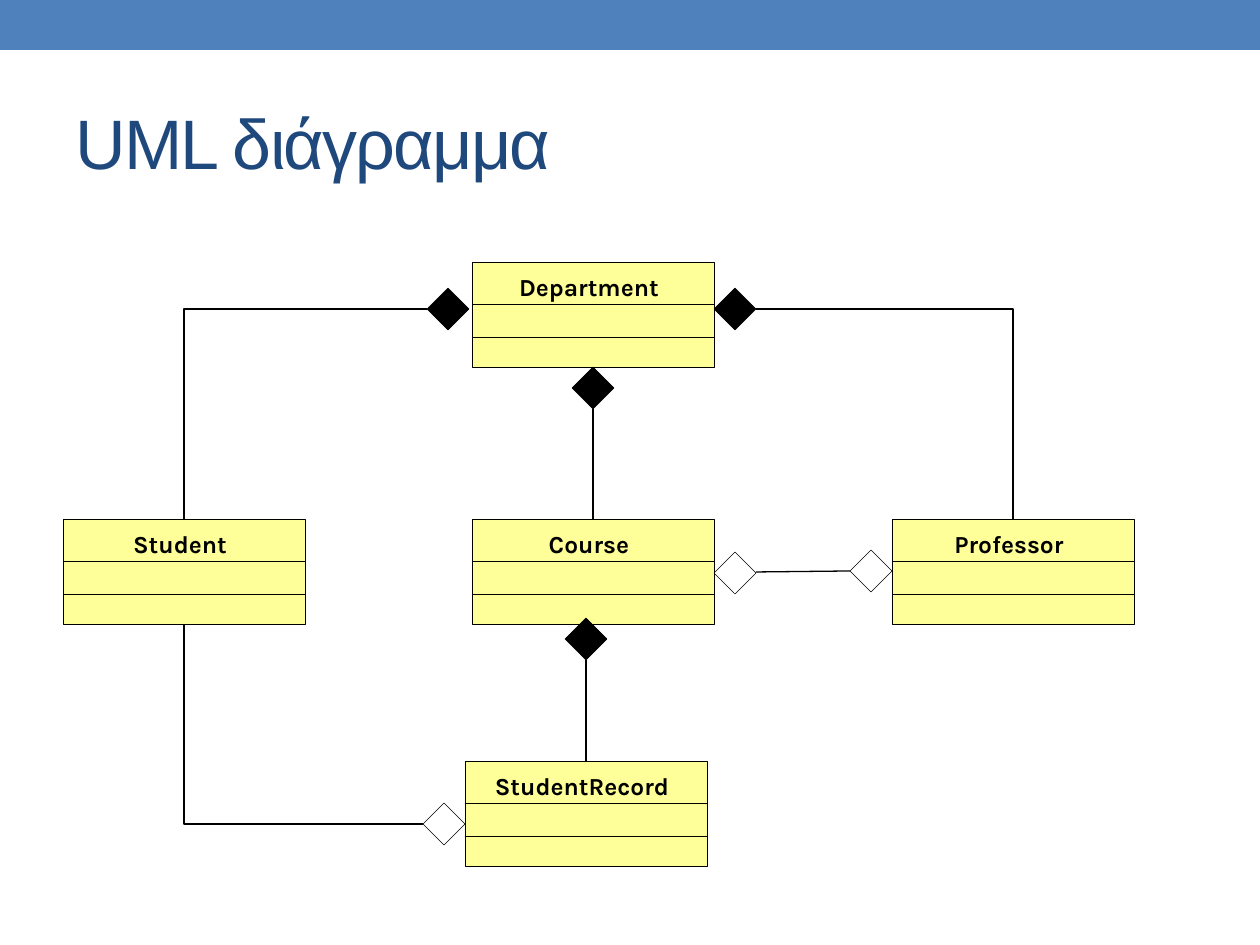
from dataclasses import dataclass

from lxml import etree
from pptx import Presentation
from pptx import util as u
from pptx.dml.color import RGBColor
from pptx.enum import shapes, text
from pptx.oxml.ns import qn

PX_PER_INCH = 126
COLORS = {"bar": "4F81BD", "title": "1F497D", "box": "FFFF99", "ink": "000000"}
BOX_WIDTH, BOX_HEIGHT = 242, 105
DIVIDERS = (42, 75)
DIAMOND = 42
THIN, NORMAL = 0.25, 0.75


@dataclass
class UmlClass:
    name: str
    left: int
    top: int


@dataclass
class Diamond:
    left: int
    top: int
    filled: bool


@dataclass
class Link:
    start: tuple[int, int]
    end: tuple[int, int]
    bent: bool = False


CLASSES = [
    UmlClass("Department", 472, 262),
    UmlClass("Course", 472, 519),
    UmlClass("Student", 63, 519),
    UmlClass("Professor", 892, 519),
    UmlClass("StudentRecord", 465, 761),
]
DIAMONDS = [
    Diamond(427, 288, True),
    Diamond(572, 367, True),
    Diamond(714, 288, True),
    Diamond(565, 618, True),
    Diamond(714, 552, False),
    Diamond(850, 550, False),
    Diamond(423, 803, False),
]
LINKS = [
    Link((427, 309), (184, 519), bent=True),
    Link((756, 309), (1013, 519), bent=True),
    Link((423, 824), (184, 624), bent=True),
    Link((593, 409), (593, 519)),
    Link((586, 660), (586, 761)),
    Link((756, 572), (850, 571)),
]


def px(length: int) -> u.Emu:
    return u.Emu(round(length * 914400 / PX_PER_INCH))


def color(name: str) -> RGBColor:
    return RGBColor.from_string(COLORS[name])


def add_block(slide, kind, left: int, top: int, width: int, height: int,
              fill: str | None, line: str | None):
    shape = slide.shapes.add_shape(kind, px(left), px(top), px(width), px(height))
    shape.shadow.inherit = False
    if fill:
        shape.fill.solid()
        shape.fill.fore_color.rgb = color(fill)
    else:
        shape.fill.background()
    if line:
        shape.line.color.rgb = color(line)
        shape.line.width = u.Pt(THIN)
    else:
        shape.line.fill.background()
    return shape


def add_label(slide, words: str, left: int, top: int, width: int, height: int,
              font: str, size: int, ink: str, bold: bool = False):
    box = slide.shapes.add_textbox(px(left), px(top), px(width), px(height))
    box.text_frame.word_wrap = True
    paragraph = box.text_frame.paragraphs[0]
    run = paragraph.add_run()
    run.text = words
    run.font.name = font
    run.font.size = u.Pt(size)
    run.font.bold = bold
    run.font.color.rgb = color(ink)
    return box.text_frame, paragraph, run


def add_line(slide, link: Link, width: float) -> None:
    kind = shapes.MSO_CONNECTOR.ELBOW if link.bent else shapes.MSO_CONNECTOR.STRAIGHT
    points = [px(value) for value in link.start + link.end]
    connector = slide.shapes.add_connector(kind, *points)
    connector.line.color.rgb = color("ink")
    connector.line.width = u.Pt(width)
    properties = connector._element.spPr
    if link.bent:
        properties.find(qn("a:prstGeom")).set("prst", "bentConnector2")
    etree.SubElement(properties, qn("a:effectLst"))


def add_title(slide) -> None:
    frame, _, run = add_label(slide, "UML διάγραμμα", 63, 73, 1134, 136,
                              "Arial", 40, "title")
    frame.vertical_anchor = text.MSO_ANCHOR.MIDDLE
    run.font._element.set("spc", "-100")


def add_class(slide, item: UmlClass) -> None:
    add_block(slide, shapes.MSO_SHAPE.RECTANGLE, item.left, item.top,
              BOX_WIDTH, BOX_HEIGHT, "box", "ink")
    _, paragraph, _ = add_label(slide, item.name, item.left + 8, item.top + 4,
                                218, 43, "Karla", 14, "ink", bold=True)
    paragraph.alignment = text.PP_ALIGN.CENTER
    spacing = etree.SubElement(paragraph._p.get_or_add_pPr(), qn("a:spcBef"))
    etree.SubElement(spacing, qn("a:spcPct")).set("val", "50000")
    for offset in DIVIDERS:
        y = item.top + offset
        add_line(slide, Link((item.left, y), (item.left + BOX_WIDTH, y)), THIN)


def main() -> None:
    presentation = Presentation()
    presentation.slide_width = px(1260)
    presentation.slide_height = px(945)
    slide = presentation.slides.add_slide(presentation.slide_layouts[6])
    add_block(slide, shapes.MSO_SHAPE.RECTANGLE, 0, 0, 1260, 50, "bar", None)
    add_title(slide)
    for item in CLASSES:
        add_class(slide, item)
    for diamond in DIAMONDS:
        add_block(slide, shapes.MSO_SHAPE.DIAMOND, diamond.left, diamond.top,
                  DIAMOND, DIAMOND, "ink" if diamond.filled else None, "ink")
    for link in LINKS:
        add_line(slide, link, NORMAL)
    presentation.save("out.pptx")


if __name__ == "__main__":
    main()
